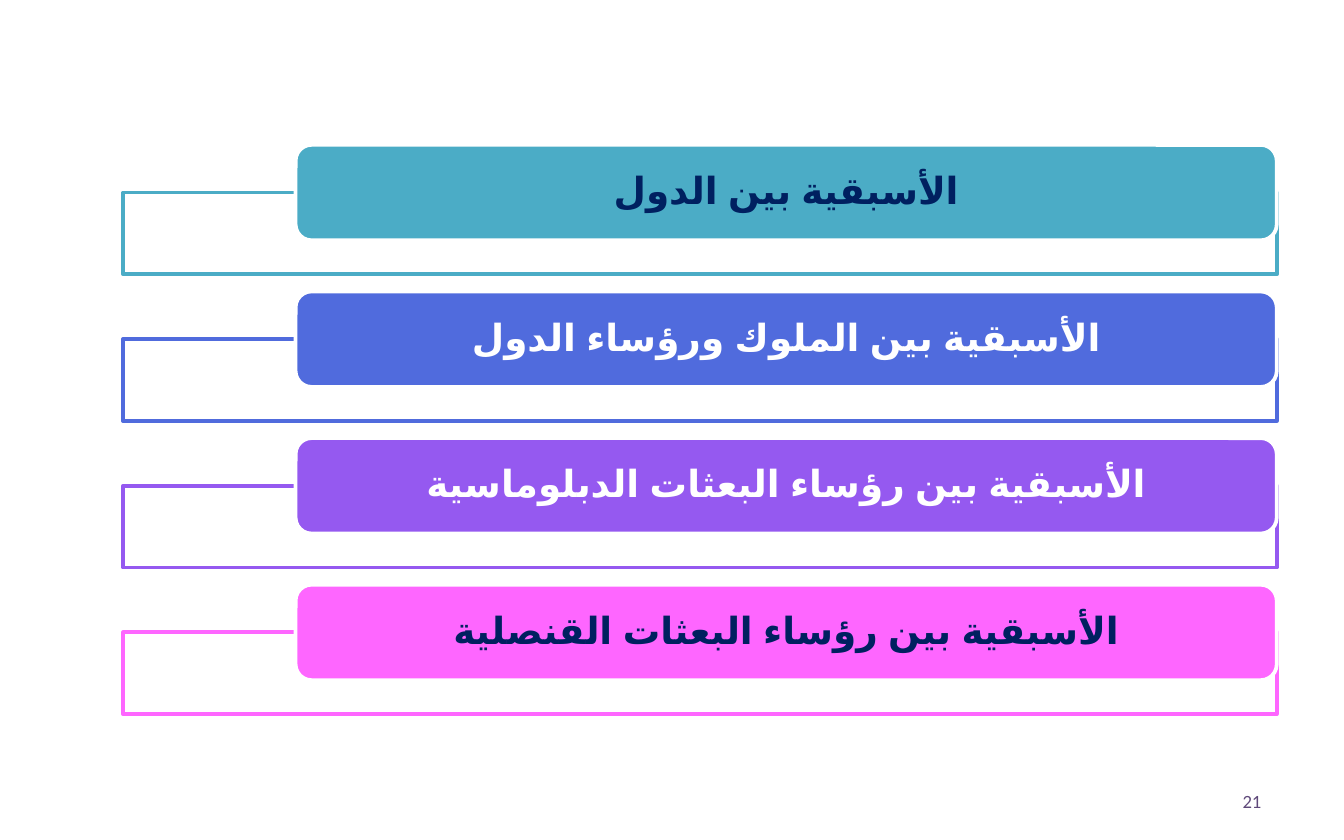
"""Build a slide listing four kinds of precedence as coloured bars."""
from lxml import etree
from pptx import Presentation
from pptx.dml.color import RGBColor
from pptx.enum import lang, shapes, text
from pptx.oxml import ns
from pptx.util import Pt

WHITE = RGBColor(0xFF, 0xFF, 0xFF)
NAVY = RGBColor(0x00, 0x20, 0x60)
PLUM = RGBColor(0x5F, 0x49, 0x7A)
TEAL = RGBColor(0x4B, 0xAC, 0xC6)
BLUE = RGBColor(0x50, 0x6B, 0xDD)
VIOLET = RGBColor(0x95, 0x59, 0xF0)
PINK = RGBColor(0xFE, 0x66, 0xFF)

TOPICS = [
    ("الأسبقية بين الدول", TEAL, NAVY),
    ("الأسبقية بين الملوك ورؤساء الدول", BLUE, WHITE),
    ("الأسبقية بين رؤساء البعثات الدبلوماسية", VIOLET, WHITE),
    ("الأسبقية بين رؤساء البعثات القنصلية", PINK, NAVY),
]
RIGHT_EDGE = 684
FIRST_TOP = 77.6
PITCH = 78.55
FRAME_LEFT, FRAME_DROP, FRAME_HEIGHT = 66, 25.5, 43.9
BAR_LEFT, BAR_HEIGHT = 158.4, 51.1


def add_box(slide, kind, left, top, width, height, fill, line=None, opacity=100):
    """Add a preset shape with a flat fill and an optional outline."""
    box = slide.shapes.add_shape(kind, Pt(left), Pt(top), Pt(width), Pt(height))
    box.shadow.inherit = False
    box.fill.solid()
    box.fill.fore_color.rgb = fill
    if opacity < 100:
        colour = box.fill._xPr.find(".//" + ns.qn("a:srgbClr"))
        etree.SubElement(colour, ns.qn("a:alpha"), val=str(opacity * 1000))
    if line is None:
        box.line.fill.background()
    else:
        box.line.color.rgb = line
        box.line.width = Pt(2)
    return box


def write(box, words, size, font, color, align, bold=False, rtl=False, spacing=None,
          after=None, insets=(7.2, 3.6)):
    """Write one formatted paragraph, vertically centred in a shape."""
    frame = box.text_frame
    frame.word_wrap = True
    frame.vertical_anchor = text.MSO_ANCHOR.MIDDLE
    frame.margin_left = frame.margin_right = Pt(insets[0])
    frame.margin_top = frame.margin_bottom = Pt(insets[1])
    paragraph = frame.paragraphs[0]
    paragraph.alignment = align
    if spacing:
        paragraph.line_spacing = spacing
    if after:
        paragraph.space_after = Pt(after)
    run = paragraph.add_run()
    run.text = words
    run.font.size = Pt(size)
    run.font.name = font
    run.font.bold = bold
    run.font.color.rgb = color
    if rtl:
        paragraph._p.get_or_add_pPr().set("rtl", "1")
        run.font.language_id = lang.MSO_LANGUAGE_ID.ARABIC
        etree.SubElement(run.font._rPr, ns.qn("a:cs"), typeface=font)


def add_topic(slide, top, words, color, ink):
    """Add an outlined frame with its titled bar on top."""
    add_box(slide, shapes.MSO_SHAPE.RECTANGLE, FRAME_LEFT, top + FRAME_DROP,
            RIGHT_EDGE - FRAME_LEFT, FRAME_HEIGHT, WHITE, color, opacity=90)
    bar = add_box(slide, shapes.MSO_SHAPE.ROUNDED_RECTANGLE, BAR_LEFT, top,
                  RIGHT_EDGE - BAR_LEFT, BAR_HEIGHT, color, WHITE)
    write(bar, words, 20, "Arial", ink, text.PP_ALIGN.CENTER, bold=True, rtl=True,
          spacing=0.9, after=7, insets=(18.7, 2.2))


def add_page_number(slide, number):
    """Add the page number at the bottom right."""
    badge = add_box(slide, shapes.MSO_SHAPE.ROUNDED_RECTANGLE, 630, 417.2, 54, 23.8,
                    WHITE, opacity=70)
    write(badge, number, 10, "Calibri", PLUM, text.PP_ALIGN.RIGHT)


def main():
    """Build and save the slide."""
    deck = Presentation()
    deck.slide_width, deck.slide_height = Pt(720), Pt(450)
    slide = deck.slides.add_slide(deck.slide_layouts[6])
    add_page_number(slide, "21")
    for row, (words, color, ink) in enumerate(TOPICS):
        add_topic(slide, FIRST_TOP + row * PITCH, words, color, ink)
    deck.save("out.pptx")


if __name__ == "__main__":
    main()
